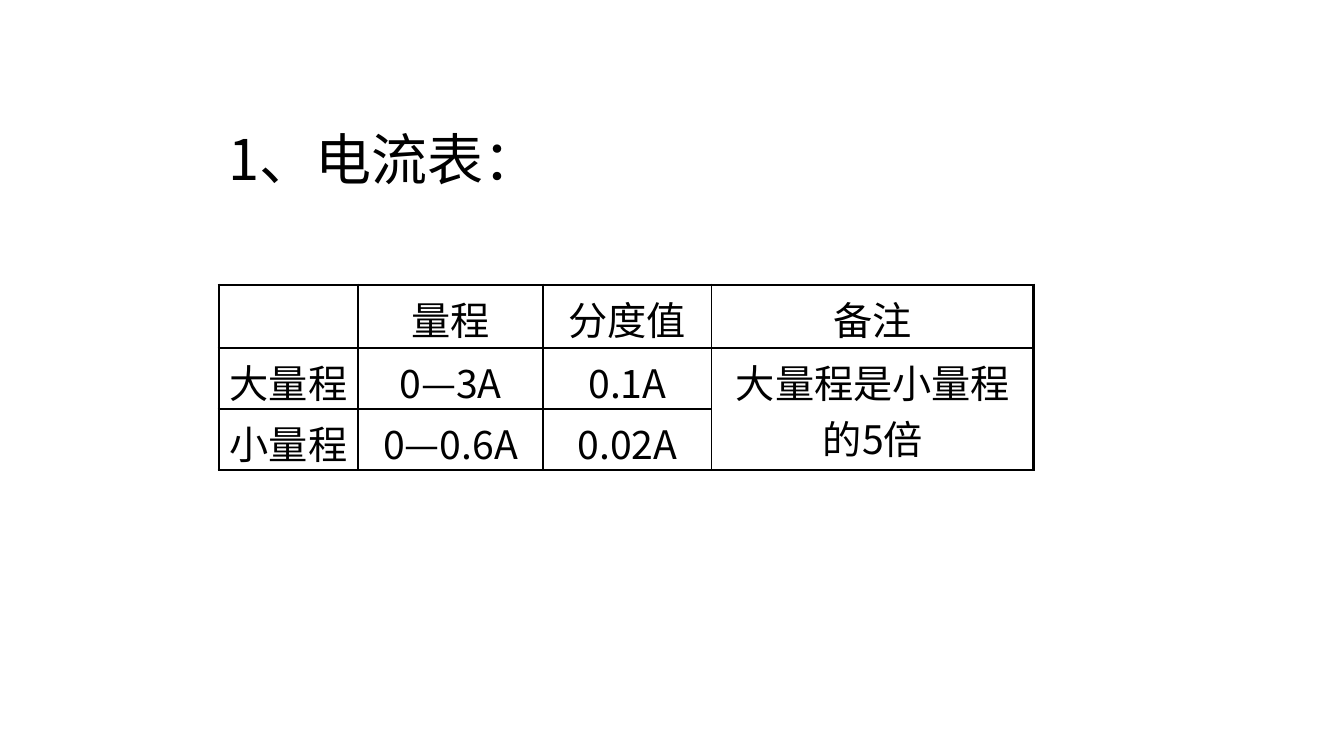
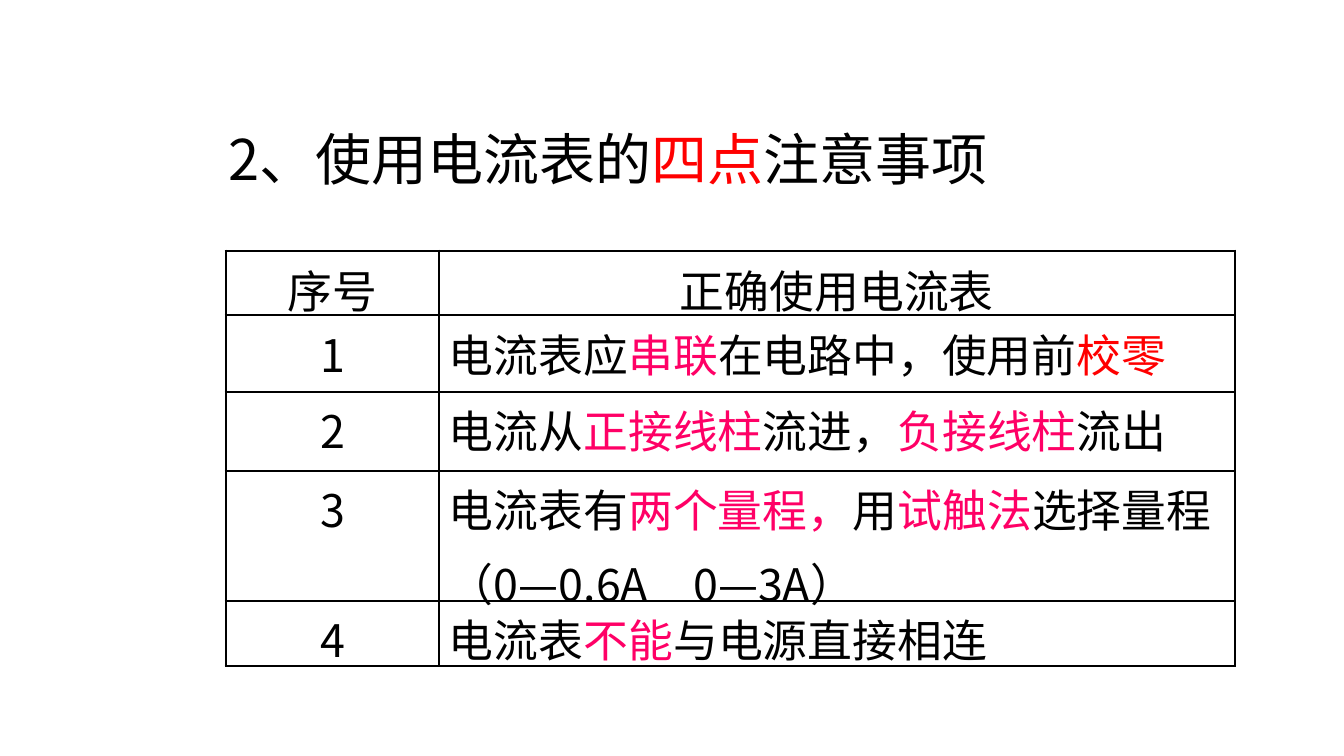
from lxml.etree import SubElement
from pptx import Presentation
from pptx.dml.color import RGBColor
from pptx.enum.text import MSO_ANCHOR, MSO_AUTO_SIZE, PP_ALIGN
from pptx.oxml.ns import qn
from pptx.util import Emu, Pt

SCALE = 914400 / 100.8
BLACK, RED, PINK = "000000", "FF0000", "FF0066"
FACE = "Noto Sans CJK SC"
THICK, THIN = 2.25, 1


def px(n):
    return Emu(round(n * SCALE))


def rgb(code):
    return RGBColor.from_string(code)


def apply(item, values):
    for name, value in values.items():
        setattr(item, name, value)


class Deck:
    title_size = 40
    title_box = {
        "word_wrap": True,
        "auto_size": MSO_AUTO_SIZE.SHAPE_TO_FIT_TEXT,
        "vertical_anchor": MSO_ANCHOR.MIDDLE,
    }
    # The negative bottom margin keeps tall CJK lines from stretching rows.
    cell_box = {
        "margin_left": px(10),
        "margin_right": px(10),
        "margin_top": px(5),
        "margin_bottom": px(-16),
        "vertical_anchor": MSO_ANCHOR.TOP,
    }
    plain = {"first_row": False, "horz_banding": False}

    def __init__(self):
        self.file = Presentation()
        apply(self.file, {"slide_width": px(1344), "slide_height": px(756)})

    def page(self):
        self.slide = self.file.slides.add_slide(self.file.slide_layouts[6])

    def text(self, frame, words, size, align):
        """Fill a frame from a string, or a list of paragraphs made of runs.

        A run is a string, or a pair of string and colour.
        """
        paras = [[words]] if isinstance(words, str) else words
        for i, runs in enumerate(paras):
            para = frame.add_paragraph() if i else frame.paragraphs[0]
            para.alignment = align
            if i:
                para.space_before = Pt(size * 0.2)
            for part in runs:
                label, hue = (part, BLACK) if isinstance(part, str) else part
                run = para.add_run()
                run.text = label
                apply(run.font, {"size": Pt(size), "name": FACE})
                run.font.color.rgb = rgb(hue)
                props = run._r.get_or_add_rPr()
                SubElement(props, qn("a:ea")).set("typeface", FACE)

    def title(self, words, width):
        box = self.slide.shapes.add_textbox(px(219), px(119), px(width), px(78))
        apply(box.text_frame, self.title_box)
        self.text(box.text_frame, words, self.title_size, PP_ALIGN.LEFT)

    def border(self, cell, edges):
        props = cell._tc.get_or_add_tcPr()
        for side, width in edges.items():
            line = SubElement(props, qn("a:ln" + side), w=str(int(Pt(width))))
            fill = SubElement(line, qn("a:solidFill"))
            SubElement(fill, qn("a:srgbClr"), val=BLACK)

    def table(self, left, top, cols, rows, data, size, merge=None, prose=None):
        """Draw a table; prose is the column set left below its heading."""
        grid = self.slide.shapes.add_table(
            len(rows), len(cols), px(left), px(top), px(sum(cols)), px(sum(rows))
        ).table
        apply(grid, self.plain)
        for col, width in zip(grid.columns, cols):
            col.width = px(width)
        for row, height in zip(grid.rows, rows):
            row.height = px(height)
        if merge:
            start, end = merge
            grid.cell(*start).merge(grid.cell(*end))
        for r, line in enumerate(data):
            for c, words in enumerate(line):
                cell = grid.cell(r, c)
                tall = cell.span_height if cell.is_merge_origin else 1
                edges = {
                    "L": THIN if c else THICK,
                    "R": THICK if c == len(cols) - 1 else THIN,
                    "T": THIN if r else THICK,
                    "B": THICK if r + tall == len(rows) else THIN,
                }
                if cell.is_spanned:
                    del edges["T"]
                self.border(cell, edges)
                cell.fill.background()
                apply(cell, self.cell_box)
                if words:
                    flush = r > 0 and c == prose
                    align = PP_ALIGN.LEFT if flush else PP_ALIGN.CENTER
                    self.text(cell.text_frame, words, size, align)


def main():
    deck = Deck()

    deck.page()
    deck.table(
        219, 285, [139, 185, 169, 322], [63, 61, 61],
        [
            ["", "量程", "分度值", "备注"],
            ["大量程", "0—3A", "0.1A", "大量程是小量程的5倍"],
            ["小量程", "0—0.6A", "0.02A", ""],
        ],
        28, merge=((1, 3), (2, 3)),
    )
    deck.title("1、电流表：", 672)

    deck.page()
    deck.title([["2、使用电流表的", ("四点", RED), "注意事项"]], 871)
    rules = [
        [["电流表应", ("串联", PINK), "在电路中，使用前", ("校零", RED)]],
        [["电流从", ("正接线柱", PINK), "流进，", ("负接线柱", PINK), "流出"]],
        [
            ["电流表有", ("两个量程，", PINK), "用", ("试触法", PINK), "选择量程"],
            ["（0—0.6A　0—3A）"],
        ],
        [["电流表", ("不能", PINK), "与电源直接相连"]],
    ]
    deck.table(
        226, 251, [213, 796], [64, 77, 79, 130, 65],
        [["序号", "正确使用电流表"]]
        + [[str(n), rule] for n, rule in enumerate(rules, 1)],
        32, prose=1,
    )

    deck.file.save("out.pptx")


if __name__ == "__main__":
    main()
